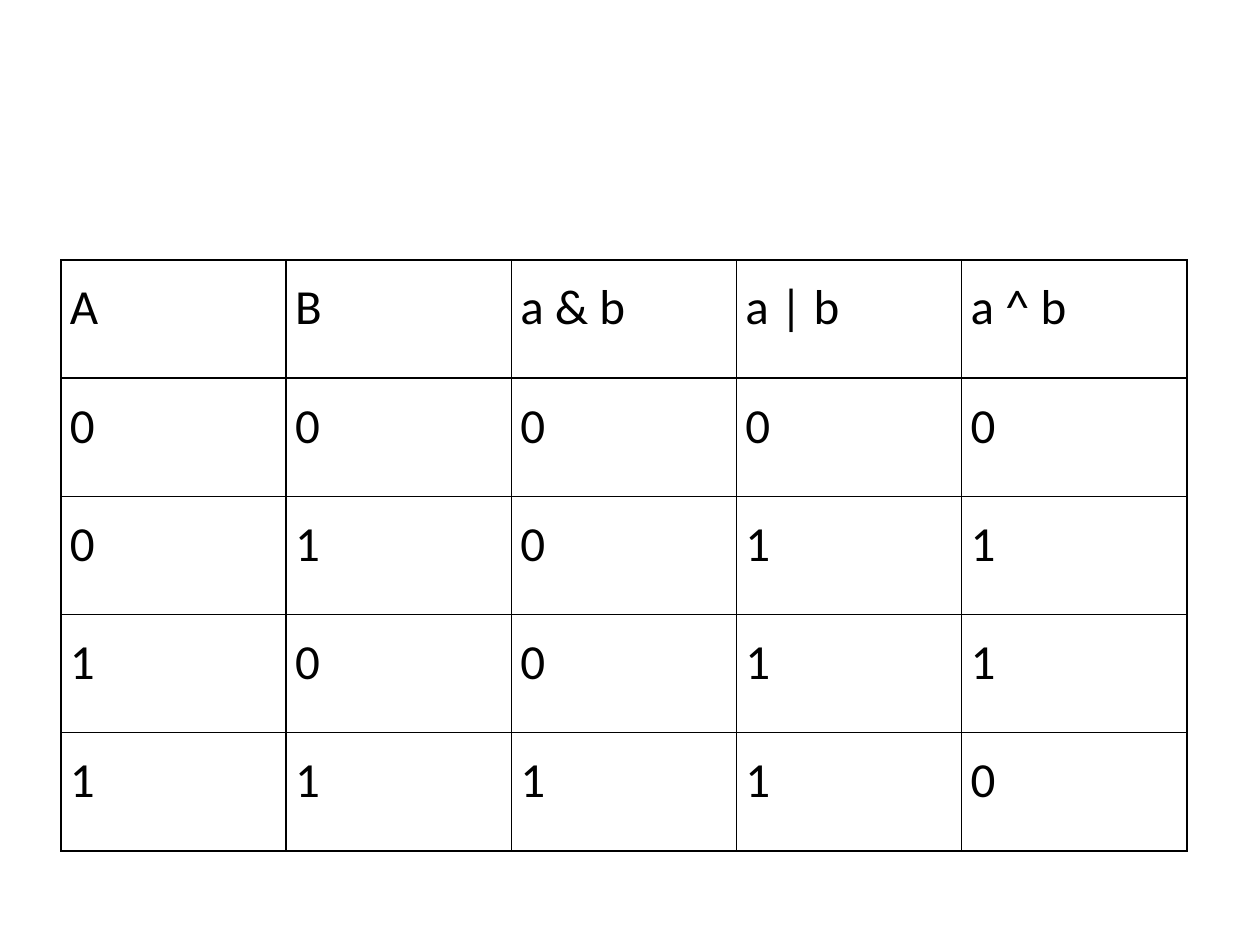
from lxml import etree
from pptx import Presentation
from pptx.dml.color import RGBColor
from pptx.oxml.ns import qn
from pptx.util import Pt

PX = 914400 / 126
BLANK_LAYOUT = 6
COLORS = {"ink": "000000", "paper": "FFFFFF"}
BORDER_SIDES = ("a:lnL", "a:lnR", "a:lnT", "a:lnB")

TRUTH_TABLE = [
    ("A", "B", "a & b", "a | b", "a ^ b"),
    ("0", "0", "0", "0", "0"),
    ("0", "1", "0", "1", "1"),
    ("1", "0", "0", "1", "1"),
    ("1", "1", "1", "1", "0"),
]


def px(n):
    return round(n * PX)


def write_text(tf, text, font="Calibri", size=28, color="ink", line=15, after=15):
    p = tf.paragraphs[0]
    p.line_spacing = Pt(line)
    p.space_after = Pt(after)
    r = p.add_run()
    r.text = text
    r.font.name = font
    r.font.size = Pt(size)
    r.font.color.rgb = RGBColor.from_string(COLORS[color])


class SlideBuilder:
    def __init__(self, prs, border_pt=1, inset=9, text_top=52):
        self.s = prs.slides.add_slide(prs.slide_layouts[BLANK_LAYOUT])
        self.border_pt = border_pt
        self.inset = inset
        self.text_top = text_top

    def background(self, color):
        fill = self.s.background.fill
        fill.solid()
        fill.fore_color.rgb = RGBColor.from_string(COLORS[color])

    def borders(self, cell, color="ink"):
        tcPr = cell._tc.get_or_add_tcPr()
        for side in BORDER_SIDES:
            ln = etree.SubElement(tcPr, qn(side), w=str(Pt(self.border_pt)))
            fill = etree.SubElement(ln, qn("a:solidFill"))
            etree.SubElement(fill, qn("a:srgbClr"), val=COLORS[color])

    def table(self, rows, x, y, w, h):
        shape = self.s.shapes.add_table(
            len(rows), len(rows[0]), px(x), px(y), px(w), px(h))
        table = shape.table
        table.first_row = False
        table.horz_banding = False
        for i, row in enumerate(rows):
            for j, text in enumerate(row):
                cell = table.cell(i, j)
                cell.margin_left = cell.margin_right = px(self.inset)
                cell.margin_top = px(self.text_top)
                cell.margin_bottom = 0
                self.borders(cell)
                cell.fill.background()
                write_text(cell.text_frame, text)


def main():
    prs = Presentation()
    prs.slide_width, prs.slide_height = px(1260), px(945)
    slide = SlideBuilder(prs)
    slide.background("paper")

    # Truth table of the bitwise operators
    slide.table(TRUTH_TABLE, 61, 260, 1126, 591)

    prs.save("out.pptx")


if __name__ == "__main__":
    main()
